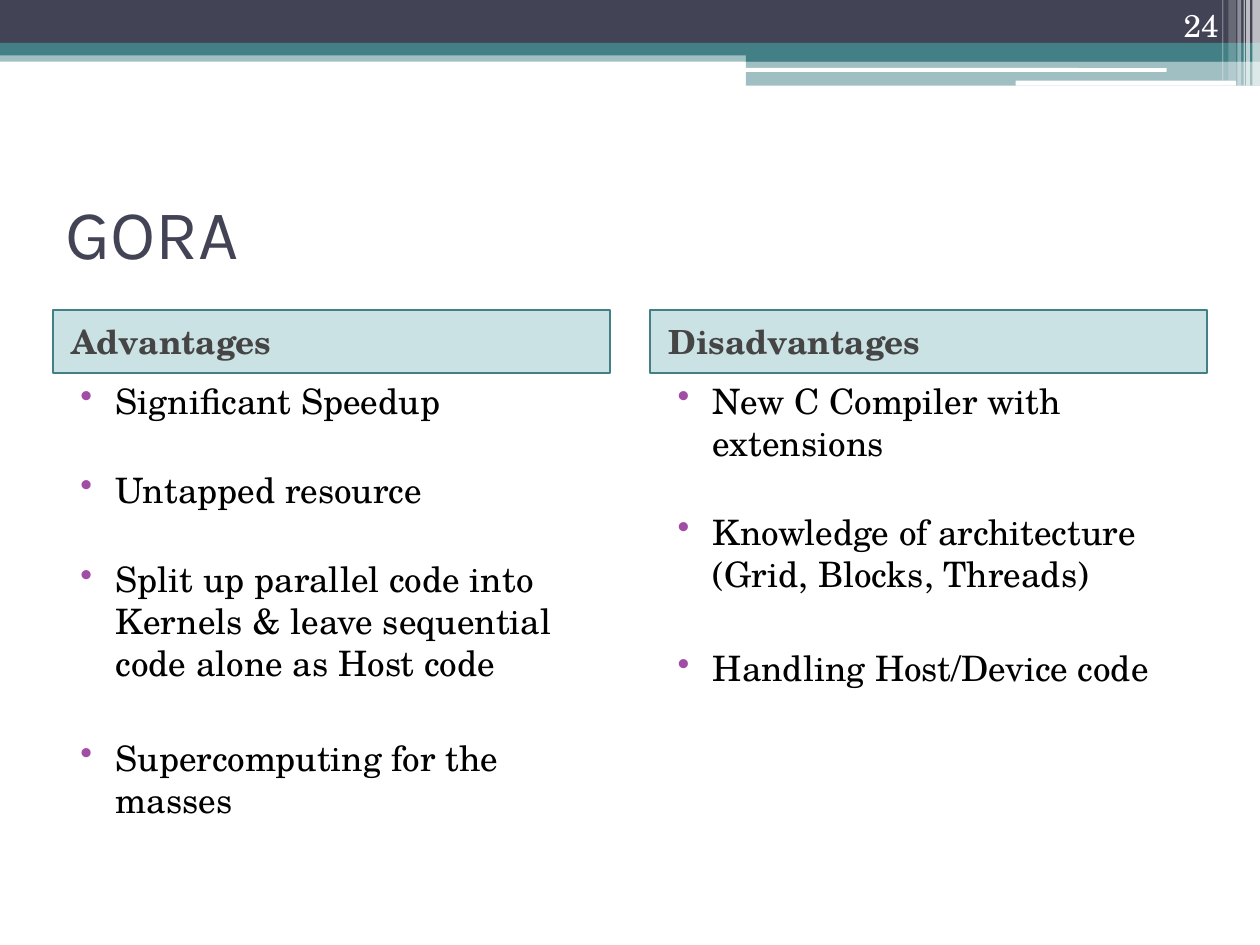
from lxml import etree
from pptx import Presentation
from pptx.dml.color import RGBColor
from pptx.enum.shapes import MSO_SHAPE as Preset
from pptx.enum.text import MSO_ANCHOR as Anchor, PP_ALIGN as Align
from pptx.oxml.ns import qn
from pptx.util import Inches, Pt

NAVY, TEAL, WHITE = "424456", "438086", "FFFFFF"
BODY_FONT, TITLE_FONT = "TeX Gyre Schola", "Karla"
COLUMNS, ROWS = 1000, 750


def color(hex_string):
    return RGBColor.from_string(hex_string)


def write(paragraph, text, size=20, font=BODY_FONT, fill="000000", bold=False,
          align=Align.LEFT, before=0):
    paragraph.alignment = align
    paragraph.space_before = Pt(before)
    run = paragraph.add_run()
    run.text = text
    run.font.size, run.font.name, run.font.bold = Pt(size), font, bold
    run.font.color.rgb = color(fill)


def indent(paragraph, left, first=0, bullet=None, bullet_fill="A04DA3"):
    properties = paragraph._p.get_or_add_pPr()
    properties.set("marL", str(Inches(left)))
    properties.set("indent", str(Inches(first)))
    if bullet:
        holder = etree.SubElement(properties, qn("a:buClr"))
        etree.SubElement(holder, qn("a:srgbClr"), val=bullet_fill)
        etree.SubElement(properties, qn("a:buChar"), char=bullet)


class SlideBuilder:
    """Places elements on a grid of COLUMNS by ROWS cells."""

    def __init__(self, presentation):
        self.cell_width = presentation.slide_width / COLUMNS
        self.cell_height = presentation.slide_height / ROWS
        self.slide = presentation.slides.add_slide(presentation.slide_layouts[5])

    def box(self, left, top, width, height):
        return (round(left * self.cell_width), round(top * self.cell_height),
                round(width * self.cell_width), round(height * self.cell_height))

    def title(self, text, *cells):
        shape = self.slide.shapes.title
        shape.left, shape.top, shape.width, shape.height = self.box(*cells)
        shape.text_frame.vertical_anchor = Anchor.MIDDLE
        write(shape.text_frame.paragraphs[0], text, size=40, font=TITLE_FONT, fill=NAVY)

    def bar(self, *cells, fill, opacity=100, preset=Preset.RECTANGLE, line=None):
        shape = self.slide.shapes.add_shape(preset, *self.box(*cells))
        shape.shadow.inherit = False
        shape.fill.solid()
        shape.fill.fore_color.rgb = color(fill)
        if opacity < 100:
            rgb = shape._element.spPr.find(".//" + qn("a:srgbClr"))
            etree.SubElement(rgb, qn("a:alpha"), val=str(opacity * 1000))
        if line:
            shape.line.color.rgb = color(line)
            shape.line.width = Pt(1)
        else:
            shape.line.fill.background()
        return shape

    def heading(self, text, *cells):
        frame = self.bar(*cells, fill="328E97", opacity=25, line=TEAL).text_frame
        frame.vertical_anchor = Anchor.MIDDLE
        write(frame.paragraphs[0], text, size=19, fill="454545", bold=True, before=3)
        indent(frame.paragraphs[0], 0.05)

    def text_box(self, *cells, anchor=Anchor.TOP):
        frame = self.slide.shapes.add_textbox(*self.box(*cells)).text_frame
        frame.word_wrap = True
        frame.vertical_anchor = anchor
        return frame

    def bullets(self, items, *cells):
        frame = self.text_box(*cells)
        for index, item in enumerate(items):
            paragraph = frame.add_paragraph() if index else frame.paragraphs[0]
            if index == 0:
                before = 3
            else:
                before = 30 if index == len(items) - 1 else 27
            write(paragraph, item, before=before)
            indent(paragraph, 0.4, -0.28, "•")

    def page_number(self, number, *cells):
        frame = self.text_box(*cells, anchor=Anchor.BOTTOM)
        write(frame.paragraphs[0], str(number), size=18, fill=WHITE, align=Align.RIGHT)


HEADER_BARS = [  # left, top, width, height, fill, opacity
    (0, 40, 1000, 9, TEAL, 50),
    (0, 0, 1000, 34, NAVY, 100),
    (0, 34, 1000, 10, TEAL, 100),
    (592, 39, 408, 10, TEAL, 100),
    (592, 48, 408, 20, TEAL, 50),
]
HEADER_RULES = [(591, 54, 335, 3), (806, 64, 175, 4)]
STRIPES = [  # left, width, height, opacity
    (994, 6, 68, 65), (989, 3, 68, 65), (987, 1, 68, 60),
    (982, 3, 68, 40), (975, 6, 64, 20), (970, 1, 64, 30),
]
LISTS = {
    "Advantages": [
        "Significant Speedup",
        "Untapped resource",
        "Split up parallel code into Kernels & leave sequential code alone as Host code",
        "Supercomputing for the masses",
    ],
    "Disadvantages": [
        "New C Compiler with extensions",
        "Knowledge of architecture (Grid, Blocks, Threads)",
        "Handling Host/Device code",
    ],
}
MARGIN, LIST_WIDTH, LIST_STEP = 42, 442, 474


def main():
    presentation = Presentation()
    presentation.slide_width, presentation.slide_height = Inches(10), Inches(7.5)
    builder = SlideBuilder(presentation)

    for *cells, fill, opacity in HEADER_BARS:
        builder.bar(*cells, fill=fill, opacity=opacity)
    for cells in HEADER_RULES:
        builder.bar(*cells, fill=WHITE, preset=Preset.ROUNDED_RECTANGLE)
    for left, width, height, opacity in STRIPES:
        builder.bar(left, 0, width, height, fill=WHITE, opacity=opacity)

    builder.title("GORA", MARGIN, 125, COLUMNS - 2 * MARGIN, 117)
    for index, (heading, items) in enumerate(LISTS.items()):
        left = MARGIN + index * LIST_STEP
        builder.heading(heading, left, 246, LIST_WIDTH, 50)
        builder.bullets(items, left, 296, LIST_WIDTH, 425)
    builder.page_number(24, 894, 0, 83, 40)

    presentation.save("out.pptx")


if __name__ == "__main__":
    main()
